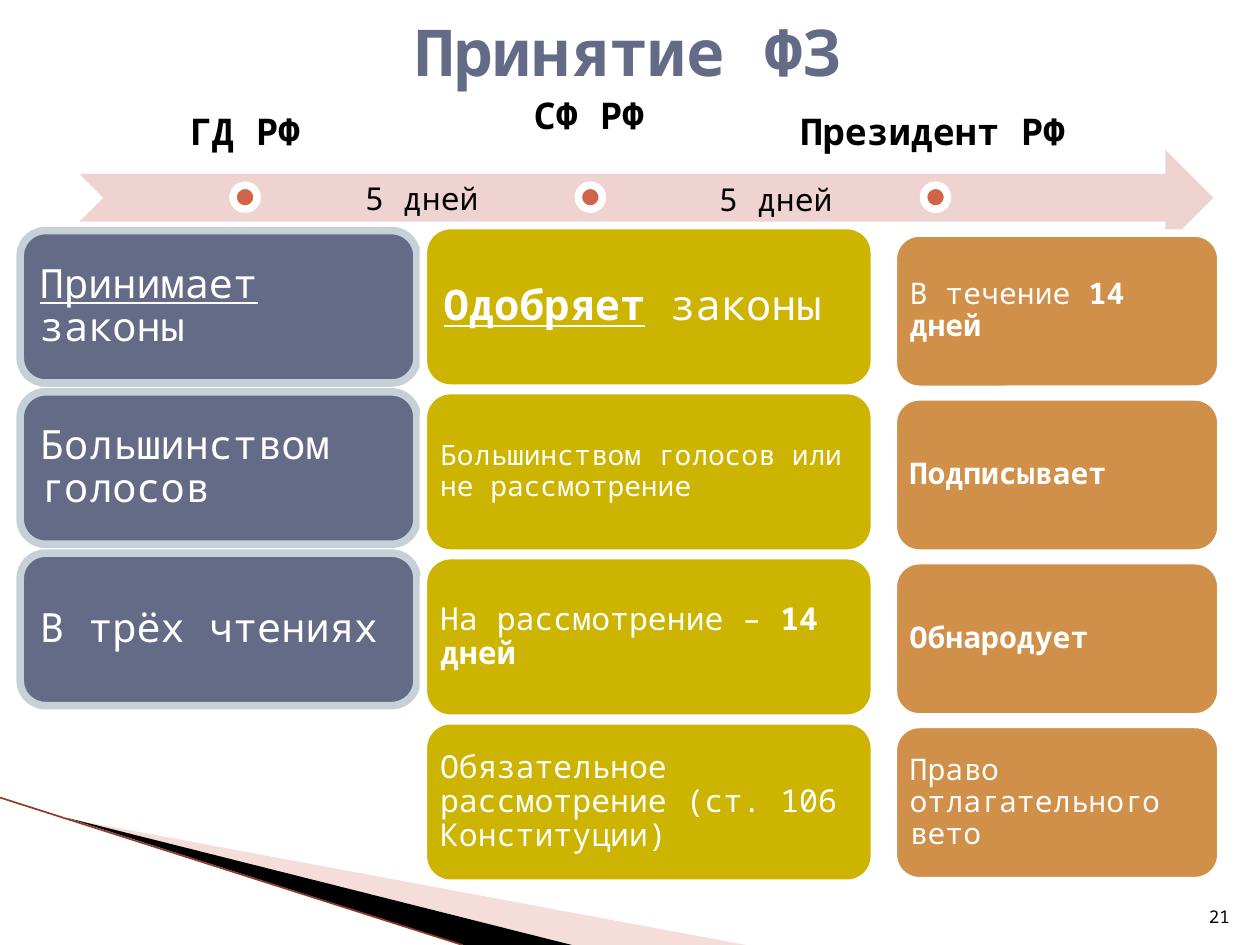
import pptx
import pptx.dml.color
import pptx.enum.shapes
import pptx.enum.text
import pptx.oxml.ns
import pptx.util
from lxml import etree

FONT = "Noto Sans Mono"
COLORS = {
    "slate": "646B86", "mist": "C5D1D7", "olive": "CCB400", "amber": "D19049",
    "dot": "D16349", "arrow": "EED3D0", "blush": "E7ACA4", "edge": "8F3B28",
    "white": "FFFFFF", "black": "000000",
}
SHAPES = pptx.enum.shapes.MSO_SHAPE
ALIGN = pptx.enum.text.PP_ALIGN
ANCHOR = pptx.enum.text.MSO_ANCHOR
BORDER = 4.33


def inches(*values):
    """Convert numbers to lengths in inches."""
    return [pptx.util.Inches(value) for value in values]


def color(name):
    """Return the named colour."""
    return pptx.dml.color.RGBColor.from_string(COLORS[name])


def write(shape, spans, size, ink="black", align=ALIGN.LEFT, anchor=ANCHOR.TOP,
          inset=None, spacing=None):
    """Fill a shape with one paragraph of (text, style letters) spans."""
    frame = shape.text_frame
    frame.word_wrap = True
    frame.auto_size = pptx.enum.text.MSO_AUTO_SIZE.NONE
    frame.vertical_anchor = anchor
    if inset is not None:
        for side in ("left", "top", "right", "bottom"):
            setattr(frame, f"margin_{side}", pptx.util.Inches(inset))
    para = frame.paragraphs[0]
    para.alignment = align
    if spacing:
        para.line_spacing = spacing
    for text, style in spans:
        span = para.add_run()
        span.text = text
        span.font.name = FONT
        span.font.size = pptx.util.Pt(size)
        span.font.color.rgb = color(ink)
        span.font.bold = "b" in style
        span.font.underline = "u" in style


def add_text(page, place, text, size, style="", **form):
    """Add a text box with one span."""
    box = page.shapes.add_textbox(*inches(*place))
    write(box, [(text, style)], size, **form)


def paint(shape, fill, line=None):
    """Set the fill and outline of a shape and drop its shadow."""
    shape.shadow.inherit = False
    shape.fill.solid()
    shape.fill.fore_color.rgb = color(fill)
    if line:
        shape.line.color.rgb = color(line)
        shape.line.width = pptx.util.Pt(BORDER)
    else:
        shape.line.fill.background()


def add_shape(page, kind, place, fill, line=None):
    """Add a painted preset shape."""
    shape = page.shapes.add_shape(kind, *inches(*place))
    paint(shape, fill, line)
    return shape


def add_wedge(page, points, fill, opacity=None):
    """Add a filled polygon, optionally see-through."""
    corners = [inches(*point) for point in points]
    builder = page.shapes.build_freeform(*corners[0])
    builder.add_line_segments(corners[1:], close=True)
    wedge = builder.convert_to_shape()
    paint(wedge, fill)
    if opacity:
        tone = wedge.fill._xPr.find(".//" + pptx.oxml.ns.qn("a:srgbClr"))
        alpha = etree.SubElement(tone, pptx.oxml.ns.qn("a:alpha"))
        alpha.set("val", str(opacity * 1000))


def add_corner(page):
    """Draw the slanted decoration at the lower left."""
    add_wedge(page, [(0.55, 6.5), (5.92, 7.5), (4.55, 7.5)], "blush", 40)
    add_wedge(page, [(0.53, 6.49), (4.54, 7.5), (3.68, 7.5)], "black")
    edge = page.shapes.add_connector(
        pptx.enum.shapes.MSO_CONNECTOR.STRAIGHT, *inches(0, 6.33, 3.67, 7.5))
    edge.line.color.rgb = color("edge")
    edge.line.width = pptx.util.Pt(0.95)
    etree.SubElement(edge._element.spPr, pptx.oxml.ns.qn("a:effectLst"))


def add_timeline(page):
    """Draw the arrow with its three labelled stages."""
    add_shape(page, SHAPES.NOTCHED_RIGHT_ARROW, (0.63, 1.19, 9, 0.76), "arrow")
    stages = [("ГД РФ", ANCHOR.BOTTOM), ("СФ РФ", ANCHOR.TOP),
              ("Президент РФ", ANCHOR.BOTTOM)]
    for column, (label, anchor) in enumerate(stages):
        left = 0.64 + 2.74 * column
        add_text(page, (left - 0.01 * column, 0.62, 2.61, 0.76), label, 21, "b",
                 align=ALIGN.CENTER, anchor=anchor, inset=0.16, spacing=0.9)
        add_shape(page, SHAPES.OVAL, (left + 1.21, 1.47, 0.19, 0.19), "dot", "white")


def add_cards(page, place, step, fill, line, cards):
    """Stack rounded cards of (size, inset, spans) in one column."""
    left, top, width, height = place
    for row, (size, inset, spans) in enumerate(cards):
        card = add_shape(page, SHAPES.ROUNDED_RECTANGLE,
                         (left, top + step * row, width, height), fill, line)
        write(card, spans, size, ink="white", anchor=ANCHOR.MIDDLE,
              inset=inset, spacing=0.9)


def main():
    """Build the slide and save it."""
    deck = pptx.Presentation()
    deck.slide_width, deck.slide_height = inches(10, 7.5)
    page = deck.slides.add_slide(deck.slide_layouts[5])
    add_corner(page)
    add_timeline(page)

    title = page.shapes.title
    title.left, title.top, title.width, title.height = inches(0.49, 0.13, 9, 0.54)
    write(title, [("Принятие ФЗ", "b")], 36.9, ink="slate",
          align=ALIGN.CENTER, anchor=ANCHOR.MIDDLE)
    add_text(page, (9.46, 7.01, 0.4, 0.4), "21", 10,
             align=ALIGN.RIGHT, anchor=ANCHOR.BOTTOM)

    add_cards(page, (0.16, 1.83, 3.15, 1.21), 1.28, "slate", "mist", [
        (23, 0.1, [("Принимает", "u"), (" законы", "")]),
        (23, 0.1, [("Большинством голосов", "")]),
        (23, 0.1, [("В трёх чтениях", "")]),
    ])
    add_cards(page, (3.36, 1.79, 3.58, 1.29), 1.31, "olive", "white", [
        (24, 0.1, [("Одобряет", "bu"), (" законы", "")]),
        (16, 0.07, [("Большинством голосов или не рассмотрение", "")]),
        (18, 0.07, [("На рассмотрение – ", ""), ("14 дней", "b")]),
        (18, 0.07, [("Обязательное рассмотрение (ст. 106 Конституции)", "")]),
    ])
    add_cards(page, (7.09, 1.85, 2.6, 1.24), 1.3, "amber", "white", [
        (17, 0.07, [("В течение ", ""), ("14 дней", "b")]),
        (17, 0.07, [("Подписывает", "b")]),
        (17, 0.07, [("Обнародует", "b")]),
        (17, 0.07, [("Право отлагательного вето", "")]),
    ])
    for place in [(2.8, 1.37, 1.57, 0.4), (5.61, 1.38, 1.78, 0.4)]:
        add_text(page, place, "5 дней", 18)
    deck.save("out.pptx")


if __name__ == "__main__":
    main()
